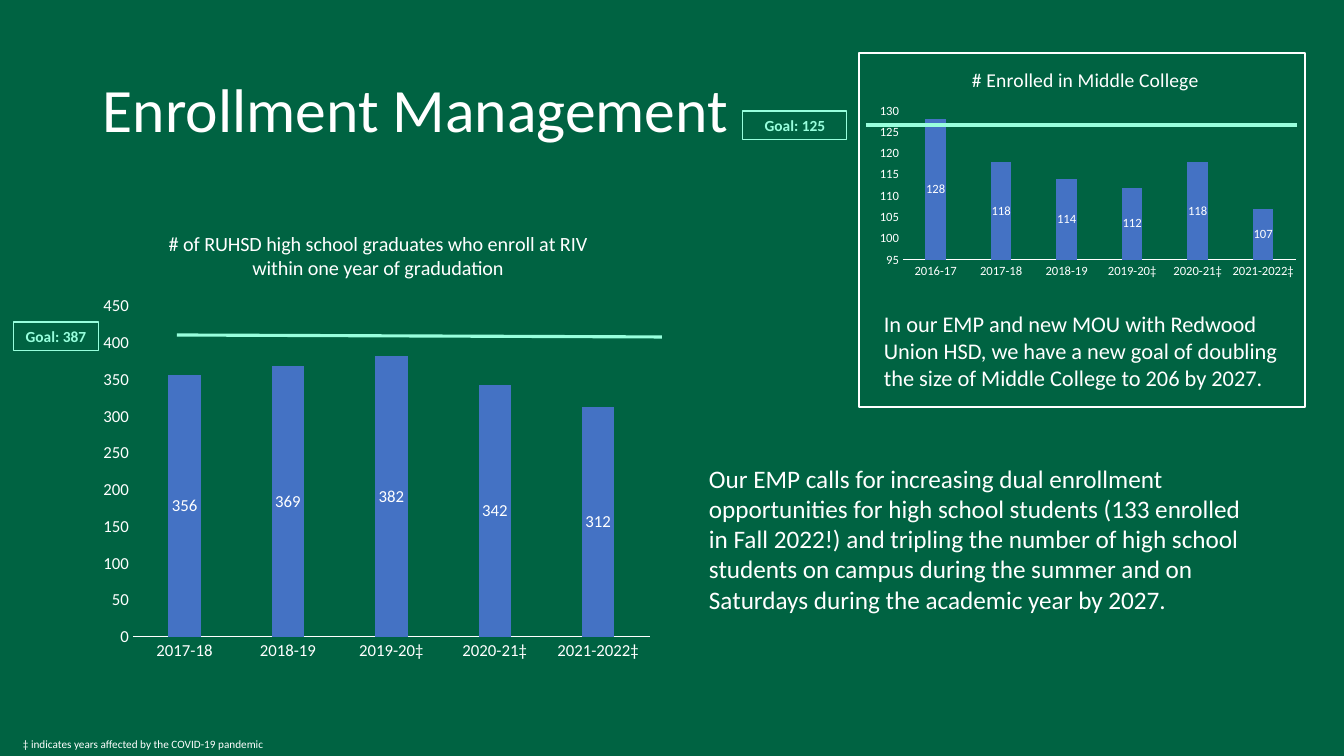
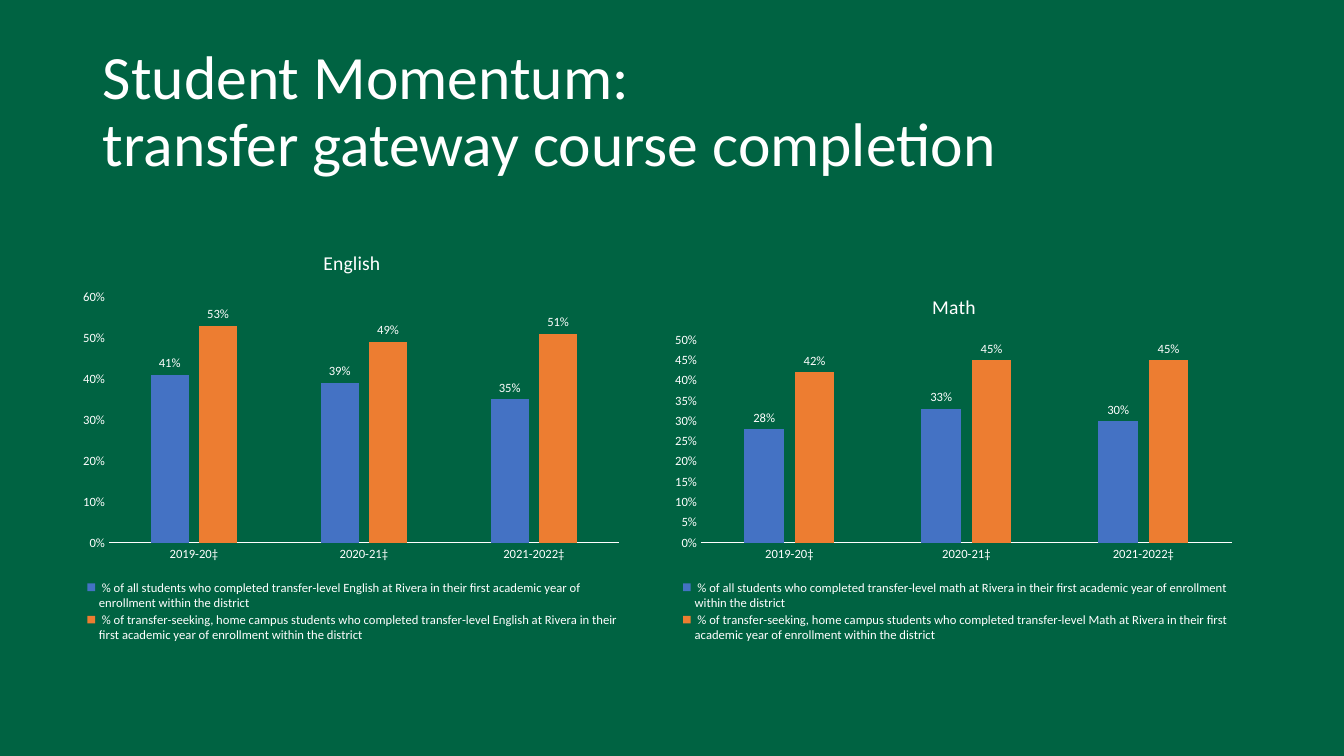
from dataclasses import dataclass

from lxml.etree import SubElement
from pptx import Presentation
from pptx.chart.data import CategoryChartData
from pptx.dml.color import RGBColor
from pptx.enum.chart import XL_CHART_TYPE, XL_LABEL_POSITION, XL_LEGEND_POSITION, XL_TICK_MARK
from pptx.enum.shapes import MSO_CONNECTOR, MSO_SHAPE
from pptx.enum.text import MSO_ANCHOR, PP_ALIGN
from pptx.oxml import parse_xml
from pptx.oxml.ns import nsdecls, qn
from pptx.util import Emu, Pt


@dataclass(frozen=True)
class Theme:
    font: str = "Calibri"
    background: RGBColor = RGBColor.from_string("006342")
    text: RGBColor = RGBColor.from_string("FFFFFF")
    goal: RGBColor = RGBColor.from_string("98FFDD")
    series: tuple = (RGBColor.from_string("4472C4"), RGBColor.from_string("ED7D31"))
    title_size: float = 44
    body_size: float = 18
    panel_size: float = 16
    chart_title_size: float = 14
    goal_size: float = 11
    small_size: float = 9
    note_size: float = 8
    thin: float = 0.75
    thick: float = 2.25


THEME = Theme()
PX = 914400 / 100.8
SLIDE_SIZE = (1344, 756)
TITLE_BOX = (93, 40, 1159, 146)

# Boxes are (left, top, width, height) in px.
RECENT_YEARS = ["2019-20‡", "2020-21‡", "2021-2022‡"]
GRADUATE_YEARS = ["2017-18", "2018-19"] + RECENT_YEARS
GRADUATE_TITLE = "# of RUHSD high school graduates who enroll at RIV within one year of gradudation"
MIDDLE_TITLE = "# Enrolled in Middle College"

ENROLLMENT = {
    "title": "Enrollment Management",
    "charts": [
        {
            "title": MIDDLE_TITLE, "box": (866, 53, 439, 231), "plot": (903, 111, 393, 149),
            "categories": ["2016-17"] + GRADUATE_YEARS,
            "series": [(MIDDLE_TITLE, [128, 118, 114, 112, 118, 107])],
            "scale": (95, 130, 5), "size": 9,
        },
        {
            "title": GRADUATE_TITLE, "box": (93, 212, 570, 459), "plot": (133, 306, 517, 331),
            "categories": GRADUATE_YEARS,
            "series": [(GRADUATE_TITLE, [356, 369, 382, 342, 312])],
            "scale": (0, 450, 50), "size": 12, "title_size": 14.4,
        },
    ],
    "panel": (859, 53, 446, 354),
    "goals": [
        ("Goal: 387", (13, 322, 86, 29), (177, 335, 662, 337)),
        ("Goal: 125", (743, 111, 104, 29), (866, 125, 1297, 125)),
    ],
    "texts": [
        ("In our EMP and new MOU with Redwood Union HSD, we have a new goal of doubling "
         "the size of Middle College to 206 by 2027.",
         (874, 305, 431, 92), THEME.panel_size),
        ("Our EMP calls for increasing dual enrollment opportunities for high school students "
         "(133 enrolled in Fall 2022!) and tripling the number of high school students on campus "
         "during the summer and on Saturdays during the academic year by 2027.",
         (699, 458, 563, 163), THEME.body_size),
        ("‡ indicates years affected by the COVID-19 pandemic",
         (13, 732, 290, 24), THEME.note_size),
    ],
}

MOMENTUM = {
    "title": "Student Momentum:\ntransfer gateway course completion",
    "charts": [
        {
            "title": "English", "box": (73, 232, 558, 416), "plot": (109, 297, 510, 246),
            "legend": (79, 578, 546, 68), "categories": RECENT_YEARS,
            "series": [
                (" % of all students who completed transfer-level English at Rivera in their first "
                 "academic year of enrollment within the district", [0.41, 0.39, 0.35]),
                (" % of transfer-seeking, home campus students who completed transfer-level English "
                 "at Rivera in their first academic year of enrollment within the district",
                 [0.53, 0.49, 0.51]),
            ],
            "scale": (0, 0.6, 0.1), "size": 9,
        },
        {
            "title": "Math", "box": (664, 277, 580, 371), "plot": (701, 340, 531, 203),
            "legend": (674, 578, 562, 68), "categories": RECENT_YEARS,
            "series": [
                (" % of all students who completed transfer-level math at Rivera in their first "
                 "academic year of enrollment within the district", [0.28, 0.33, 0.3]),
                (" % of transfer-seeking, home campus students who completed transfer-level Math "
                 "at Rivera in their first academic year of enrollment within the district",
                 [0.42, 0.45, 0.45]),
            ],
            "scale": (0, 0.5, 0.05), "size": 9,
        },
    ],
}


def emu(lengths):
    return [Emu(round(length * PX)) for length in lengths]


def style_font(font, size, color=THEME.text, bold=False):
    font.name, font.size, font.bold = THEME.font, Pt(size), bold
    font.color.rgb = color


def write_text(shape, text, size, color=THEME.text, bold=False, align=PP_ALIGN.LEFT,
               anchor=MSO_ANCHOR.TOP, spacing=None):
    frame = shape.text_frame
    frame.word_wrap = True
    frame.vertical_anchor = anchor
    para = frame.paragraphs[0]
    para.text = text
    para.alignment = align
    para.line_spacing = spacing
    for span in para.runs:
        style_font(span.font, size, color, bold)


def add_text(page, text, box, size, **text_format):
    write_text(page.shapes.add_textbox(*emu(box)), text, size, **text_format)


def add_outline(page, box, color, width):
    shape = page.shapes.add_shape(MSO_SHAPE.RECTANGLE, *emu(box))
    shape.shadow.inherit = False
    shape.fill.background()
    shape.line.color.rgb = color
    shape.line.width = Pt(width)
    return shape


def add_goal(page, text, box, ends):
    line = page.shapes.add_connector(MSO_CONNECTOR.STRAIGHT, *emu(ends))
    line.line.color.rgb = THEME.goal
    line.line.width = Pt(THEME.thick)
    SubElement(line._element.spPr, qn("a:effectLst"))
    tag = add_outline(page, box, THEME.goal, THEME.thin)
    write_text(tag, text, THEME.goal_size, color=THEME.goal, bold=True,
               align=PP_ALIGN.CENTER, anchor=MSO_ANCHOR.MIDDLE)


def set_layout(part, index, area, box, inner=False):
    """Pin a chart part to an area of the slide, as fractions of the chart's box."""
    for old in part.findall(qn("c:layout")):
        part.remove(old)
    left, top, width, height = box
    fractions = {"x": (area[0] - left) / width, "y": (area[1] - top) / height,
                 "w": area[2] / width, "h": area[3] / height}
    target = '<c:layoutTarget val="inner"/>' if inner else ""
    modes = '<c:xMode val="edge"/><c:yMode val="edge"/>'
    values = "".join(f'<c:{key} val="{value:.4f}"/>' for key, value in fractions.items())
    part.insert(index, parse_xml(
        f'<c:layout {nsdecls("c")}><c:manualLayout>{target}{modes}{values}'
        '</c:manualLayout></c:layout>'))


def no_fill():
    return parse_xml(f'<c:spPr {nsdecls("c", "a")}><a:noFill/><a:ln><a:noFill/></a:ln></c:spPr>')


def style_axes(chart, scale, size, number_format):
    values, categories = chart.value_axis, chart.category_axis
    values.minimum_scale, values.maximum_scale, values.major_unit = scale
    values.has_major_gridlines = False
    values.tick_labels.number_format = number_format
    values.tick_labels.number_format_is_linked = False
    values.format.line.fill.background()
    categories.format.line.color.rgb = THEME.text
    categories.format.line.width = Pt(THEME.thin)
    for axis in (values, categories):
        axis.major_tick_mark = axis.minor_tick_mark = XL_TICK_MARK.NONE
        style_font(axis.tick_labels.font, size)


def add_column_chart(page, title, box, plot, categories, series, scale, size,
                     title_size=THEME.chart_title_size, legend=None):
    number_format = "0%" if scale[1] <= 1 else "0"
    data = CategoryChartData(number_format=number_format)
    data.categories = categories
    for name, values in series:
        data.add_series(name, values)
    chart = page.shapes.add_chart(XL_CHART_TYPE.COLUMN_CLUSTERED, *emu(box), data).chart
    style_font(chart.font, size)
    chart.has_title = True
    heading = chart.chart_title.text_frame
    heading.text = title
    style_font(heading.paragraphs[0].runs[0].font, title_size)
    style_axes(chart, scale, size, number_format)

    columns = chart.plots[0]
    columns.gap_width, columns.overlap = 219, -27
    columns.vary_by_categories = False
    columns.has_data_labels = True
    labels = columns.data_labels
    labels.show_value = True
    labels.number_format, labels.number_format_is_linked = number_format, False
    labels.position = XL_LABEL_POSITION.OUTSIDE_END if legend else XL_LABEL_POSITION.CENTER
    style_font(labels.font, size)
    for column, color in zip(columns.series, THEME.series):
        column.format.fill.solid()
        column.format.fill.fore_color.rgb = color

    chart.has_legend = legend is not None
    if legend:
        chart.legend.position = XL_LEGEND_POSITION.BOTTOM
        chart.legend.include_in_layout = False
        style_font(chart.legend.font, THEME.small_size)
        set_layout(chart.legend._element, 1, legend, box)
    chart_part = chart._chartSpace.find(qn("c:chart"))
    plot_area = chart_part.find(qn("c:plotArea"))
    set_layout(plot_area, 0, plot, box, inner=True)
    plot_area.append(no_fill())
    chart_part.addnext(no_fill())


def add_page(deck, content):
    page = deck.slides.add_slide(deck.slide_layouts[6])
    add_text(page, content["title"], TITLE_BOX, THEME.title_size,
             anchor=MSO_ANCHOR.MIDDLE, spacing=0.9)
    for chart in content["charts"]:
        add_column_chart(page, **chart)
    if "panel" in content:
        add_outline(page, content["panel"], THEME.text, 1)
    for goal in content.get("goals", []):
        add_goal(page, *goal)
    for text in content.get("texts", []):
        add_text(page, *text)


def main():
    deck = Presentation()
    deck.slide_width, deck.slide_height = emu(SLIDE_SIZE)
    fill = deck.slide_master.background.fill
    fill.solid()
    fill.fore_color.rgb = THEME.background
    for content in (ENROLLMENT, MOMENTUM):
        add_page(deck, content)
    deck.save("out.pptx")


if __name__ == "__main__":
    main()
